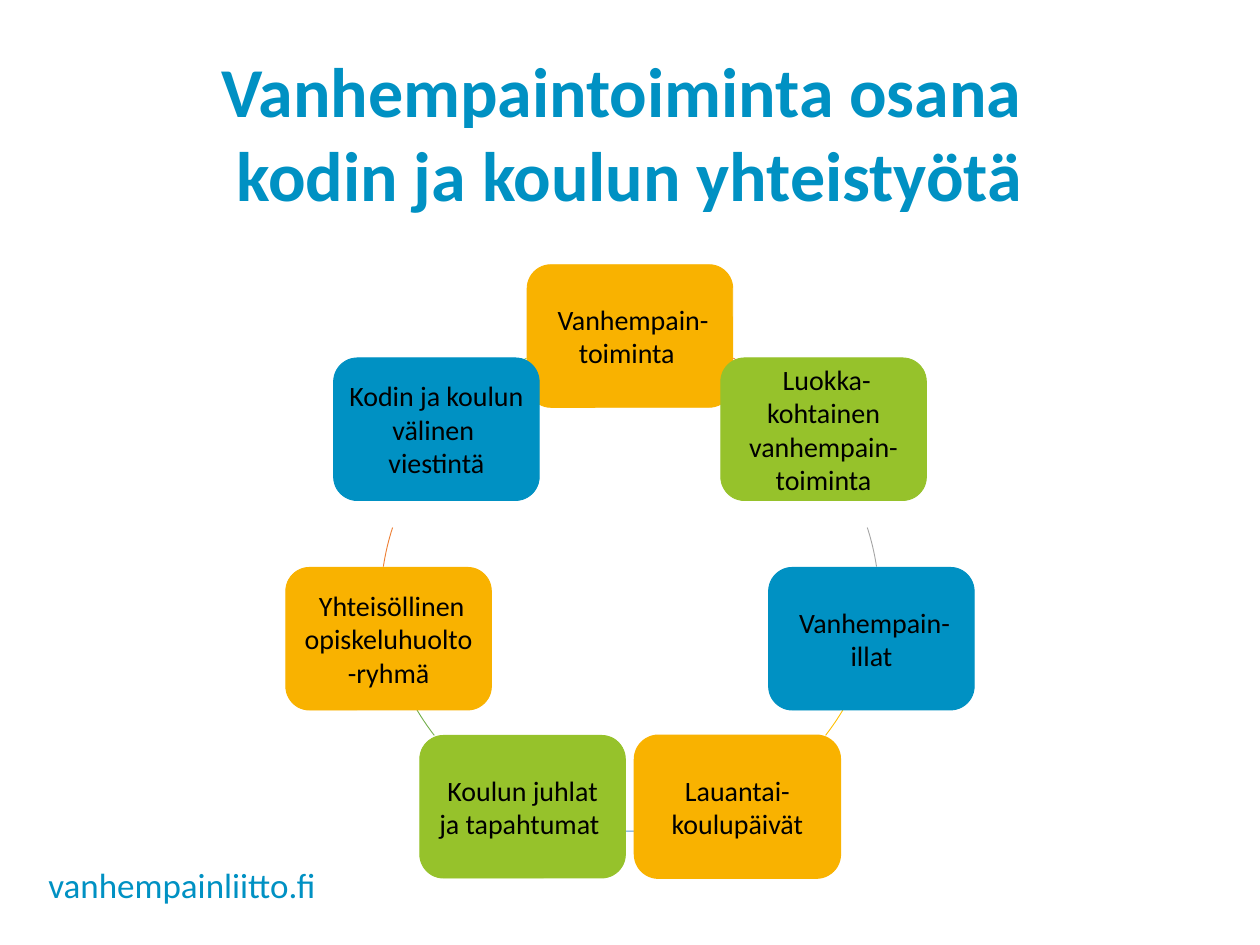
from math import cos, pi, sin

from lxml.etree import SubElement
from pptx import Presentation
from pptx.dml.color import RGBColor
from pptx.enum.shapes import MSO_SHAPE
from pptx.enum.text import MSO_ANCHOR, MSO_AUTO_SIZE, PP_ALIGN
from pptx.oxml.ns import qn
from pptx.util import Pt

FONT = "Calibri"
BLACK = RGBColor(0x00, 0x00, 0x00)
BLUE = RGBColor(0x00, 0x91, 0xC3)
AMBER = RGBColor(0xF9, 0xB2, 0x00)
LIME = RGBColor(0x96, 0xC2, 0x2B)
ORANGE = RGBColor(0xED, 0x7D, 0x31)
GREY = RGBColor(0xA5, 0xA5, 0xA5)
GOLD = RGBColor(0xFF, 0xC0, 0x00)
SKY = RGBColor(0x5B, 0x9B, 0xD5)
GREEN = RGBColor(0x70, 0xAD, 0x47)

CARD_WIDTH, CARD_HEIGHT = 117.5, 81.5

CARDS = [
    (" Vanhempain-\ntoiminta ", AMBER, 0.5, 3.6),
    (" Luokka-kohtainen\vvanhempain-\vtoiminta", LIME, 0.5, 3.6),
    (" Vanhempain-\villat", BLUE, 0.5, 5),
    ("Lauantai-\vkoulupäivät", AMBER, 1, 5),
    ("Koulun juhlat ja tapahtumat ", LIME, 0.5, 5),
    (" Yhteisöllinen opiskeluhuolto-ryhmä", AMBER, 0.5, 5),
    ("Kodin ja koulun välinen \vviestintä", BLUE, 0.5, 5),
]

ARCS = [
    (299, 310, -9.5, -5, ORANGE),
    (342.1, 351.4, 1, 11.5, GREY),
    (30.7, 37.8, 0, 0, GOLD),
    (88.8, 91.2, 0, 0, SKY),
    (142.2, 149.3, 0, 0, GREEN),
    (188.6, 197.9, -1, 11.5, ORANGE),
    (230, 241, 9.5, -5, LIME),
]


def format_text(frame, size, color, align, bold=False):
    frame.word_wrap = True
    for paragraph in frame.paragraphs:
        paragraph.alignment = align
        for span in paragraph.runs:
            span.font.name = FONT
            span.font.size = Pt(size)
            span.font.bold = bold
            span.font.color.rgb = color


def place_title(page, left, top, width, height):
    title = page.shapes.title
    title.left, title.top = Pt(left), Pt(top)
    title.width, title.height = Pt(width), Pt(height)
    frame = title.text_frame
    frame.text = "Vanhempaintoiminta osana \vkodin ja koulun yhteistyötä"
    frame.auto_size = MSO_AUTO_SIZE.NONE
    frame.vertical_anchor = MSO_ANCHOR.BOTTOM
    frame.paragraphs[0].space_after = Pt(8)
    format_text(frame, 40, BLUE, PP_ALIGN.CENTER, bold=True)


def place_footer(page, left, top, width, height):
    box = page.shapes.add_textbox(Pt(left), Pt(top), Pt(width), Pt(height))
    box.text_frame.text = "vanhempainliitto.fi"
    format_text(box.text_frame, 20, BLUE, PP_ALIGN.LEFT)


def add_arc(page, left, top, diameter, start, end, color):
    arc = page.shapes.add_shape(
        MSO_SHAPE.ARC, Pt(left), Pt(top), Pt(diameter), Pt(diameter)
    )
    arc.adjustments[0] = start * 0.6
    arc.adjustments[1] = end * 0.6
    arc.shadow.inherit = False
    arc.fill.background()
    arc.line.color.rgb = color
    arc.line.width = Pt(0.5)


def add_card(page, center_x, center_y, text, color, line_width, inset):
    card = page.shapes.add_shape(
        MSO_SHAPE.ROUNDED_RECTANGLE,
        Pt(center_x - CARD_WIDTH / 2),
        Pt(center_y - CARD_HEIGHT / 2),
        Pt(CARD_WIDTH),
        Pt(CARD_HEIGHT),
    )
    card.shadow.inherit = False
    card.fill.solid()
    card.fill.fore_color.rgb = color
    card.line.color.rgb = color
    card.line.width = Pt(line_width)
    frame = card.text_frame
    frame.text = text
    frame.vertical_anchor = MSO_ANCHOR.MIDDLE
    frame.margin_left = frame.margin_right = Pt(inset)
    frame.margin_top = frame.margin_bottom = Pt(inset)
    format_text(frame, 16, BLACK, PP_ALIGN.CENTER)


def place_cycle(page, left, top, diameter):
    radius = diameter / 2
    for start, end, shift_x, shift_y, color in ARCS:
        add_arc(page, left + shift_x, top + shift_y, diameter, start, end, color)
    for index, card in enumerate(CARDS):
        angle = 2 * pi * index / len(CARDS)
        center_x = left + radius + radius * sin(angle)
        center_y = top + radius - radius * cos(angle)
        add_card(page, center_x, center_y, *card)


def main():
    deck = Presentation()
    deck.slide_width, deck.slide_height = Pt(720), Pt(540)
    page = deck.slides.add_slide(deck.slide_layouts[5])
    place_footer(page, 20.5, 489.6, 168, 32)
    place_title(page, 107.3, 0, 504.7, 126.7)
    place_cycle(page, 218.5, 192, 283)
    deck.save("out.pptx")


if __name__ == "__main__":
    main()
